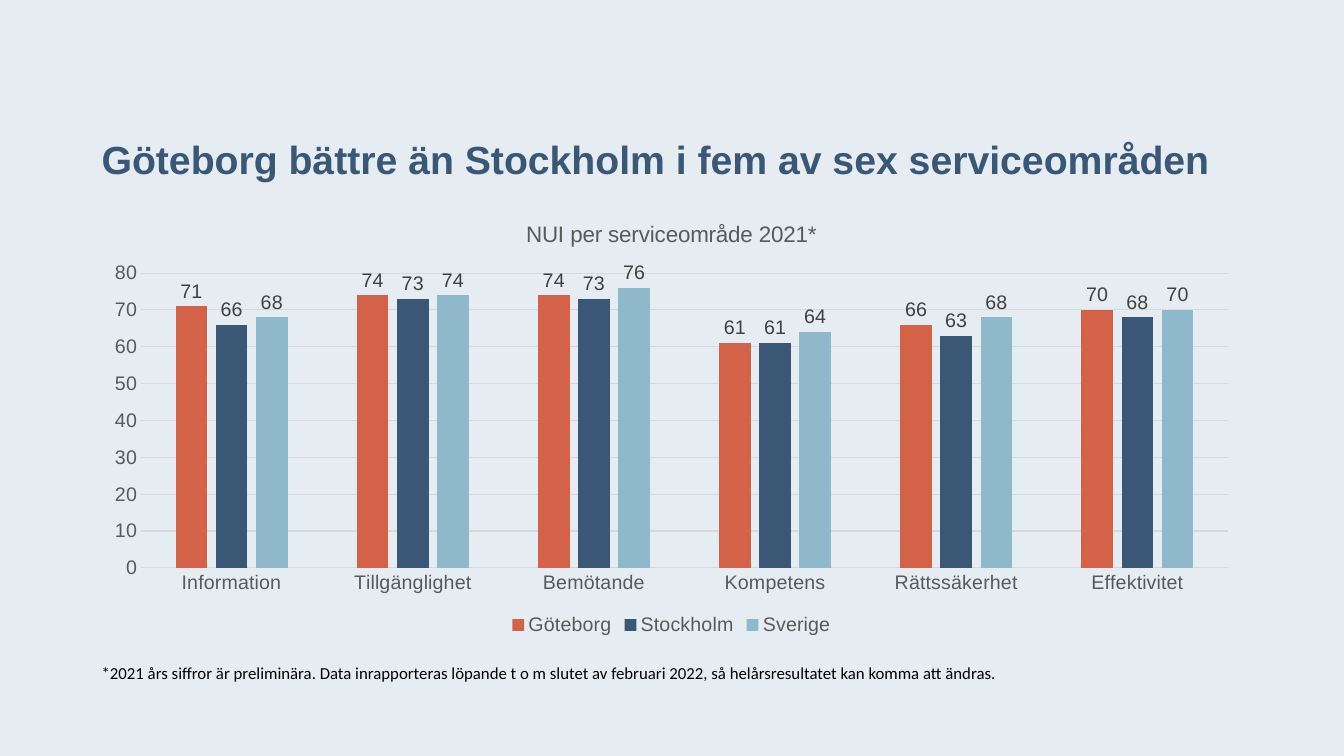
from dataclasses import dataclass
from typing import Any

from pptx import Presentation
from pptx.chart.data import CategoryChartData
from pptx.dml.color import RGBColor
from pptx.enum.chart import XL_CHART_TYPE, XL_LABEL_POSITION, XL_LEGEND_POSITION, XL_TICK_MARK
from pptx.enum.text import MSO_ANCHOR
from pptx.util import Inches, Pt

COLUMNS = XL_CHART_TYPE.COLUMN_CLUSTERED
OUTSIDE_END = XL_LABEL_POSITION.OUTSIDE_END
LEGEND_BOTTOM = XL_LEGEND_POSITION.BOTTOM
NO_TICK = XL_TICK_MARK.NONE
TOP = MSO_ANCHOR.TOP
BOTTOM = MSO_ANCHOR.BOTTOM


@dataclass(frozen=True)
class Theme:
    background: str = "E5EDF2"
    heading: str = "3A5776"
    note: str = "000000"
    chart_text: str = "595959"
    label_text: str = "404040"
    grid: str = "D9D9D9"
    heading_size: int = 28
    chart_title_size: int = 16
    chart_size: int = 14
    note_size: int = 12
    main_font: str = "Arial"
    note_font: str = "Calibri"


@dataclass(frozen=True)
class TextBlock:
    text: str
    top: float
    width: float
    height: float
    anchor: Any
    line_spacing: Any
    font: dict[str, Any]


@dataclass(frozen=True)
class Region:
    name: str
    color: str
    scores: tuple[int, ...]


THEME = Theme()
LEFT = 0.91
CONTENT_WIDTH = 11.5
SERVICE_AREAS = ("Information", "Tillgänglighet", "Bemötande",
                 "Kompetens", "Rättssäkerhet", "Effektivitet")
REGIONS = (
    Region("Göteborg", "D36248", (71, 74, 74, 61, 66, 70)),
    Region("Stockholm", "3B5776", (66, 73, 73, 61, 63, 68)),
    Region("Sverige", "8FB8CA", (68, 74, 76, 64, 68, 70)),
)
TEXT_BLOCKS = (
    TextBlock(
        "Göteborg bättre än Stockholm i fem av sex serviceområden",
        0.41, CONTENT_WIDTH, 1.45, BOTTOM, Pt(31),
        {"name": THEME.main_font, "size": Pt(THEME.heading_size),
         "bold": True, "color": THEME.heading},
    ),
    TextBlock(
        "*2021 års siffror är preliminära. Data inrapporteras löpande t o m slutet av "
        "februari 2022, så helårsresultatet kan komma att ändras.",
        6.53, 9.46, 0.3, TOP, 1.0,
        {"name": THEME.note_font, "size": Pt(THEME.note_size),
         "bold": False, "color": THEME.note},
    ),
)


def apply_values(target: Any, values: dict[str, Any]) -> None:
    for name, value in values.items():
        if name == "color":
            target.color.rgb = RGBColor.from_string(value)
        else:
            setattr(target, name, value)


def chart_font(size: int, color: str) -> dict[str, Any]:
    return {"name": THEME.main_font, "size": Pt(size), "bold": False, "color": color}


def add_text(page: Any, block: TextBlock) -> None:
    box = page.shapes.add_textbox(
        Inches(LEFT), Inches(block.top), Inches(block.width), Inches(block.height))
    apply_values(box.text_frame, {"word_wrap": True, "vertical_anchor": block.anchor})
    para = box.text_frame.paragraphs[0]
    para.line_spacing = block.line_spacing
    span = para.add_run()
    span.text = block.text
    apply_values(span.font, block.font)


def style_axes(chart: Any) -> None:
    for axis in (chart.category_axis, chart.value_axis):
        apply_values(axis, {"major_tick_mark": NO_TICK, "minor_tick_mark": NO_TICK})
        apply_values(axis.tick_labels.font, chart_font(THEME.chart_size, THEME.chart_text))
    grid_line = {"color": THEME.grid, "width": Pt(0.75)}
    apply_values(chart.category_axis.format.line, grid_line)
    apply_values(chart.value_axis, {"minimum_scale": 0, "maximum_scale": 80,
                                    "major_unit": 10, "has_major_gridlines": True})
    apply_values(chart.value_axis.major_gridlines.format.line, grid_line)
    chart.value_axis.format.line.fill.background()


def add_score_chart(page: Any) -> None:
    data = CategoryChartData(number_format="0")
    data.categories = SERVICE_AREAS
    for region in REGIONS:
        data.add_series(region.name, region.scores)
    chart = page.shapes.add_chart(
        COLUMNS, Inches(LEFT), Inches(2), Inches(CONTENT_WIDTH), Inches(4.35), data).chart
    apply_values(chart, {"has_title": True, "has_legend": True})
    apply_values(chart.font, chart_font(THEME.chart_size, THEME.chart_text))

    para = chart.chart_title.text_frame.paragraphs[0]
    span = para.add_run()
    span.text = "NUI per serviceområde 2021*"
    apply_values(span.font, chart_font(THEME.chart_title_size, THEME.chart_text))
    chart.chart_title.include_in_layout = False

    apply_values(chart.legend, {"position": LEGEND_BOTTOM, "include_in_layout": False})
    apply_values(chart.legend.font, chart_font(THEME.chart_size, THEME.chart_text))
    style_axes(chart)

    plot = chart.plots[0]
    apply_values(plot, {"gap_width": 219, "overlap": -27, "vary_by_categories": False})
    for series, region in zip(plot.series, REGIONS):
        series.format.fill.solid()
        series.format.fill.fore_color.rgb = RGBColor.from_string(region.color)
        apply_values(series.data_labels, {"show_value": True, "position": OUTSIDE_END})
        apply_values(series.data_labels.font, chart_font(THEME.chart_size, THEME.label_text))


def main() -> None:
    deck = Presentation()
    apply_values(deck, {"slide_width": Inches(13.33), "slide_height": Inches(7.5)})
    page = deck.slides.add_slide(deck.slide_layouts[6])
    page.background.fill.solid()
    page.background.fill.fore_color.rgb = RGBColor.from_string(THEME.background)
    add_score_chart(page)
    for block in TEXT_BLOCKS:
        add_text(page, block)
    deck.save("out.pptx")


if __name__ == "__main__":
    main()
